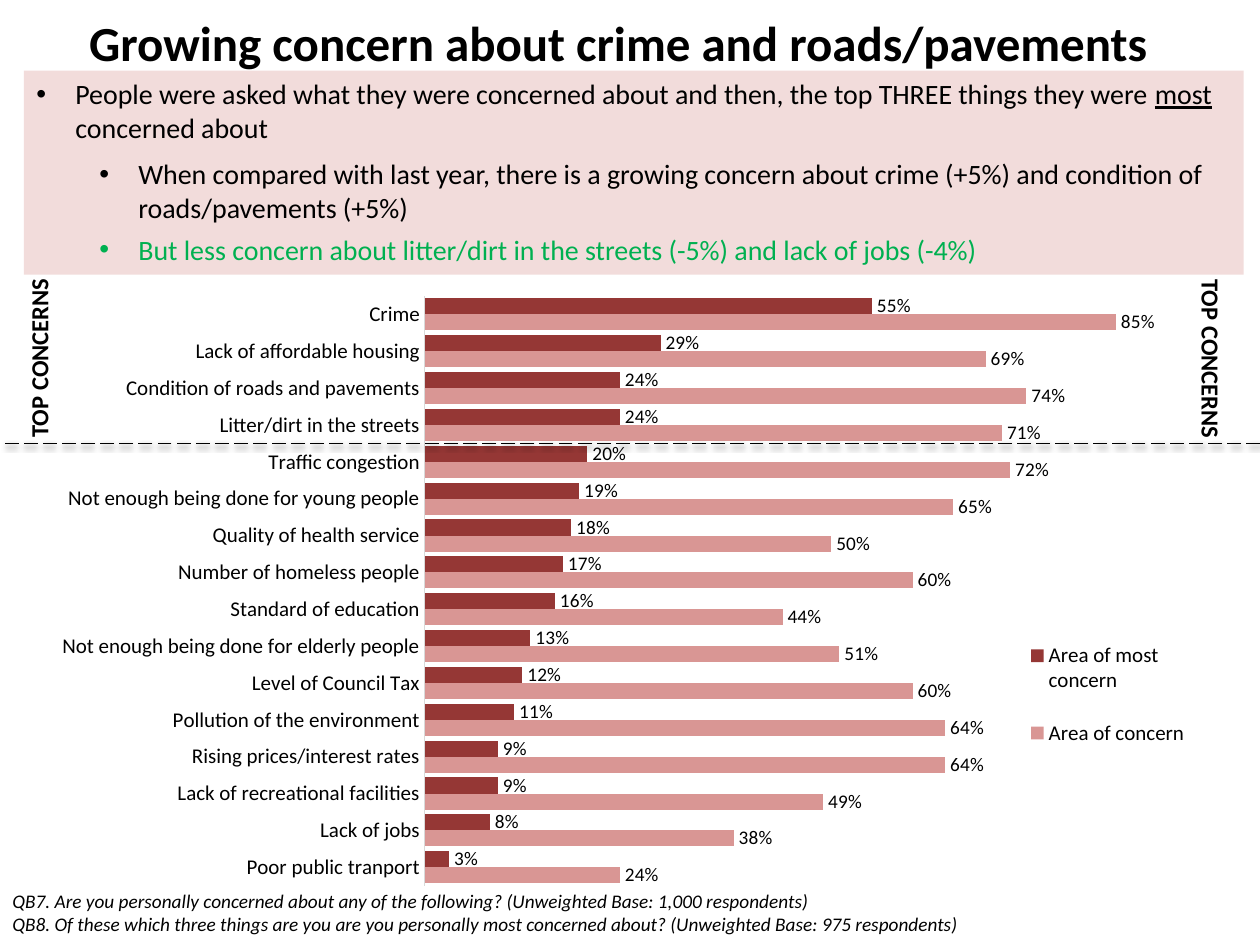
import lxml.etree
import pptx
import pptx.chart.data
import pptx.dml.color
import pptx.enum.chart
import pptx.enum.dml
import pptx.enum.shapes
import pptx.enum.text
import pptx.oxml
import pptx.oxml.ns
import pptx.util

Inches, Pt = pptx.util.Inches, pptx.util.Pt
qn = pptx.oxml.ns.qn

COLORS = {
    "text": "000000",
    "panel": "F2DCDB",
    "good": "00B050",
    "concern": "D99694",
    "most": "953735",
    "axis": "D9D9D9",
}

CONCERNS = [
    ("Poor public tranport", 0.24, 0.03),
    ("Lack of jobs", 0.38, 0.08),
    ("Lack of recreational facilities", 0.49, 0.09),
    ("Rising prices/interest rates", 0.64, 0.09),
    ("Pollution of the environment", 0.64, 0.11),
    ("Level of Council Tax", 0.6, 0.12),
    ("Not enough being done for elderly people", 0.51, 0.13),
    ("Standard of education", 0.44, 0.16),
    ("Number of homeless people", 0.6, 0.17),
    ("Quality of health service", 0.5, 0.18),
    ("Not enough being done for young people", 0.65, 0.19),
    ("Traffic congestion", 0.72, 0.2),
    ("Litter/dirt in the streets", 0.71, 0.24),
    ("Condition of roads and pavements", 0.74, 0.24),
    ("Lack of affordable housing", 0.69, 0.29),
    ("Crime", 0.85, 0.55),
]


class SlideBuilder:
    """Holds the style and the current page, and adds each kind of element."""

    font_name = "Calibri"

    def __init__(self, page):
        self.page = page

    def color(self, name):
        return pptx.dml.color.RGBColor.from_string(COLORS[name])

    def style(self, font, size, color="text", **marks):
        font.name = self.font_name
        font.size = Pt(size)
        font.color.rgb = self.color(color)
        for mark, value in marks.items():
            setattr(font, mark, value)

    def span(self, para, text, size, color="text", **marks):
        span = para.add_run()
        span.text = text
        self.style(span.font, size, color, **marks)

    def text(self, place, lines, size, rotation=0, wrap=True, **marks):
        box = self.page.shapes.add_textbox(*map(Inches, place))
        box.rotation = rotation
        frame = box.text_frame
        frame.word_wrap = wrap
        for index, line in enumerate(lines):
            para = frame.add_paragraph() if index else frame.paragraphs[0]
            self.span(para, line, size, **marks)
        return box

    def bullet_panel(self, place, bullets, size):
        panel = self.page.shapes.add_shape(
            pptx.enum.shapes.MSO_SHAPE.RECTANGLE, *map(Inches, place))
        panel.shadow.inherit = False
        panel.fill.solid()
        panel.fill.fore_color.rgb = self.color("panel")
        panel.line.fill.background()
        frame = panel.text_frame
        frame.word_wrap = True
        frame.vertical_anchor = pptx.enum.text.MSO_ANCHOR.TOP
        for index, (level, before, color, spans) in enumerate(bullets):
            para = frame.add_paragraph() if index else frame.paragraphs[0]
            para.alignment = pptx.enum.text.PP_ALIGN.LEFT
            para.level = level
            para.space_before = Pt(before)
            properties = para._p.get_or_add_pPr()
            properties.set("marL", str(Inches(0.31 + 0.5 * level)))
            properties.set("indent", str(Inches(-0.31)))
            lxml.etree.SubElement(properties, qn("a:buFont")).set("typeface", "Arial")
            lxml.etree.SubElement(properties, qn("a:buChar")).set("char", "•")
            for text, underline in spans:
                self.span(para, text, size, color, underline=underline)

    def dashed_line(self, start, end):
        line = self.page.shapes.add_connector(
            pptx.enum.shapes.MSO_CONNECTOR.STRAIGHT, *map(Inches, start + end))
        line.line.color.rgb = self.color("text")
        line.line.width = Pt(1)
        line.line.dash_style = pptx.enum.dml.MSO_LINE.LONG_DASH
        line._element.spPr.append(pptx.oxml.parse_xml(
            '<a:effectLst xmlns:a="http://schemas.openxmlformats.org/drawingml/2006/main">'
            f'<a:outerShdw blurRad="{Pt(3.1)}" dist="{Pt(1.6)}" dir="5400000" rotWithShape="0">'
            f'<a:srgbClr val="{COLORS["text"]}"><a:alpha val="38000"/></a:srgbClr>'
            '</a:outerShdw></a:effectLst>'))

    def layout(self, parent, position, place, inner=False):
        target = '<c:layoutTarget val="inner"/>' if inner else ""
        modes = '<c:xMode val="edge"/><c:yMode val="edge"/>'
        sizes = "".join(f'<c:{key} val="{value}"/>' for key, value in zip("xywh", place))
        for old in parent.findall(qn("c:layout")):
            parent.remove(old)
        parent.insert(position, pptx.oxml.parse_xml(
            '<c:layout xmlns:c="http://schemas.openxmlformats.org/drawingml/2006/chart">'
            f'<c:manualLayout>{target}{modes}{sizes}</c:manualLayout></c:layout>'))

    def bar_chart(self, place, rows, series):
        data = pptx.chart.data.CategoryChartData(number_format="0%")
        names, *columns = zip(*rows)
        data.categories = names
        for (name, _), values in zip(series, columns):
            data.add_series(name, values)
        chart = self.page.shapes.add_chart(
            pptx.enum.chart.XL_CHART_TYPE.BAR_CLUSTERED, *map(Inches, place), data).chart
        chart.has_title = False
        self.style(chart.font, 10)

        plot = chart.plots[0]
        plot.gap_width = 30
        plot.overlap = 0
        plot.vary_by_categories = False
        for bars, (_, color) in zip(plot.series, series):
            bars.format.fill.solid()
            bars.format.fill.fore_color.rgb = self.color(color)
            labels = bars.data_labels
            labels.show_value = True
            labels.number_format = "0%"
            labels.number_format_is_linked = False
            labels.position = pptx.enum.chart.XL_LABEL_POSITION.OUTSIDE_END
            self.style(labels.font, 11)

        axis = chart.category_axis
        axis.major_tick_mark = pptx.enum.chart.XL_TICK_MARK.NONE
        axis.format.line.color.rgb = self.color("axis")
        axis.format.line.width = Pt(0.75)
        self.style(axis.tick_labels.font, 12)
        scale = chart.value_axis
        scale.minimum_scale, scale.maximum_scale = 0, 0.9
        scale.has_major_gridlines = False
        scale.visible = False

        chart.has_legend = True
        chart.legend.position = pptx.enum.chart.XL_LEGEND_POSITION.RIGHT
        chart.legend.include_in_layout = False
        self.style(chart.legend.font, 12)
        self.layout(chart.legend._element, 1, (0.86, 0.54, 0.14, 0.25))
        self.layout(chart._chartSpace.chart.plotArea, 0, (0.37, 0.03, 0.6, 0.94), inner=True)


def main():
    deck = pptx.Presentation()
    deck.slide_width, deck.slide_height = Inches(10), Inches(7.5)
    builder = SlideBuilder(deck.slides.add_slide(deck.slide_layouts[6]))

    title = builder.text((0.61, 0.02, 8.7, 0.63),
                         ["Growing concern about crime and roads/pavements"], 28, bold=True)
    title.text_frame.vertical_anchor = pptx.enum.text.MSO_ANCHOR.MIDDLE
    builder.bullet_panel((0.19, 0.56, 9.68, 1.62), [
        (0, 0, "text", [
            ("People were asked what they were concerned about and then, "
             "the top THREE things they were ", False),
            ("most", True),
            (" concerned about", False)]),
        (1, 7.3, "text", [
            ("When compared with last year, there is a growing concern about crime (+5%) "
             "and condition of roads/pavements (+5%)", False)]),
        (1, 4.9, "good", [
            ("But less concern about litter/dirt in the streets (-5%) "
             "and lack of jobs (-4%)", False)]),
    ], 16)
    builder.text((0, 7.01, 7.74, 0.47), [
        "QB7. Are you personally concerned about any of the following? "
        "(Unweighted Base: 1,000 respondents)",
        "QB8. Of these which three things are you are you personally most concerned about? "
        "(Unweighted Base: 975 respondents)",
    ], 11, wrap=False, italic=True)
    builder.bar_chart((-0.21, 2.2, 9.68, 4.98), CONCERNS,
                      [("Area of concern", "concern"), ("Area of most concern", "most")])
    builder.dashed_line((10, 3.52), (0, 3.52))
    for left, top, rotation in [(-0.46, 2.63, 270), (8.84, 2.72, 90)]:
        builder.text((left, top, 1.54, 0.34), ["TOP CONCERNS"], 14, rotation, bold=True)
    deck.save("out.pptx")


if __name__ == "__main__":
    main()
